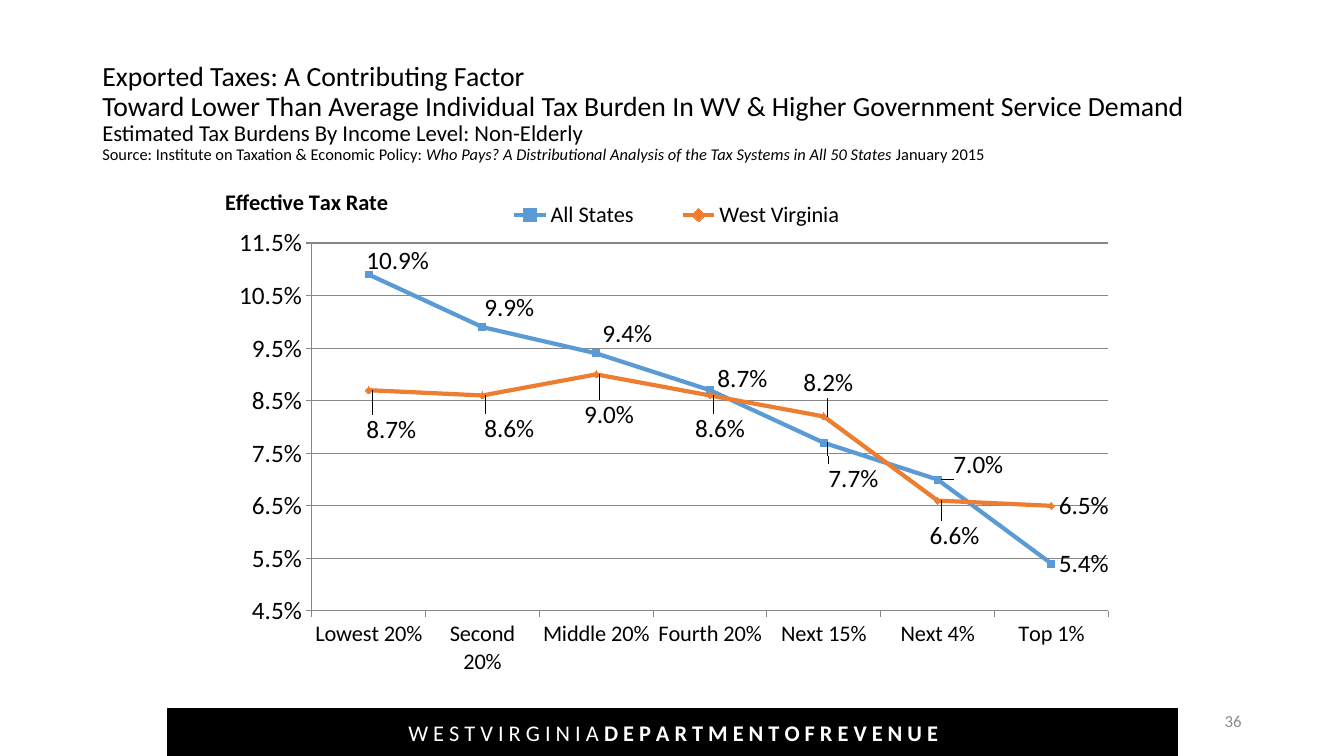
from dataclasses import dataclass

from pptx import Presentation
from pptx.chart.data import CategoryChartData as Data
from pptx.dml.color import RGBColor as Rgb
from pptx.enum.chart import XL_CHART_TYPE as Kind
from pptx.enum.chart import XL_LABEL_POSITION as Side
from pptx.enum.chart import XL_LEGEND_POSITION as Spot
from pptx.enum.chart import XL_MARKER_STYLE as Mark
from pptx.enum.chart import XL_TICK_MARK as Tick
from pptx.enum.shapes import MSO_SHAPE as Form
from pptx.enum.text import MSO_ANCHOR as Anchor
from pptx.enum.text import PP_ALIGN as Align
from pptx.oxml.xmlchemy import OxmlElement as Node
from pptx.util import Pt


@dataclass(frozen=True)
class Theme:
    font: str = "Calibri"
    black: str = "000000"
    white: str = "FFFFFF"
    gray: str = "8C8C8C"
    grid: str = "878787"
    blue: str = "5B9BD5"
    orange: str = "ED7D31"
    head: float = 19.8
    sub: float = 16.2
    source: float = 11.7
    label: float = 18
    small: float = 16
    page: float = 12


class Board:
    """Holds the theme and the current slide."""

    def __init__(self, slide, theme):
        self.slide = slide
        self.theme = theme

    def style(self, font, size, color, bold=False, italic=False):
        font.name = self.theme.font
        font.size = Pt(size)
        font.bold = bold
        font.italic = italic
        font.color.rgb = Rgb.from_string(color)

    def text(self, box, lines, color, align=Align.LEFT, anchor=Anchor.MIDDLE, pitch=1.0):
        """Each line is a list of (words, size, bold, italic) runs."""
        shape = self.slide.shapes.add_textbox(*map(Pt, box))
        frame = shape.text_frame
        frame.word_wrap = True
        frame.vertical_anchor = anchor
        frame.text = "\n".join("" for _ in lines)
        for para, runs in zip(frame.paragraphs, lines):
            para.alignment = align
            para.line_spacing = pitch
            for words, size, bold, italic in runs:
                run = para.add_run()
                run.text = words
                self.style(run.font, size, color, bold, italic)
        return shape

    def bar(self, box, color):
        shape = self.slide.shapes.add_shape(Form.RECTANGLE, *map(Pt, box))
        shape.shadow.inherit = False
        shape.fill.solid()
        shape.fill.fore_color.rgb = Rgb.from_string(color)
        shape.line.color.rgb = Rgb.from_string(color)
        shape.line.width = Pt(1)
        return shape

    def place(self, owner, index, **parts):
        """Give a chart part a manual layout."""
        for old in owner.xpath("c:layout"):
            owner.remove(old)
        layout, manual = Node("c:layout"), Node("c:manualLayout")
        layout.append(manual)
        for tag, value in parts.items():
            item = Node(f"c:{tag}")
            item.set("val", str(value))
            manual.append(item)
        owner.insert(index, layout)

    def axis(self, axis, size):
        axis.major_tick_mark = Tick.OUTSIDE
        axis.minor_tick_mark = Tick.NONE
        axis.format.line.color.rgb = Rgb.from_string(self.theme.grid)
        self.style(axis.tick_labels.font, size, self.theme.black)

    def lines(self, box, cats, rows, title):
        """Each row is (name, values, color, marker, label shifts in points)."""
        look = self.theme
        data = Data(number_format="0.0%")
        data.categories = cats
        for name, values, *_ in rows:
            data.add_series(name, values)
        chart = self.slide.shapes.add_chart(Kind.LINE_MARKERS, *map(Pt, box), data).chart
        chart.has_title = False
        self.style(chart.font, look.label, look.black)

        # Axes
        self.axis(chart.category_axis, look.small)
        scale = chart.value_axis
        self.axis(scale, look.label)
        scale.minimum_scale, scale.maximum_scale, scale.major_unit = 0.045, 0.115, 0.01
        scale.tick_labels.number_format = "0.0%"
        scale.tick_labels.number_format_is_linked = False
        scale.has_major_gridlines = True
        scale.major_gridlines.format.line.color.rgb = Rgb.from_string(look.grid)
        scale.has_title = True
        frame = scale.axis_title.text_frame
        frame.text = title
        self.style(frame.paragraphs[0].runs[0].font, look.small, look.black, bold=True)

        # Legend
        chart.has_legend = True
        chart.legend.position = Spot.TOP
        chart.legend.include_in_layout = False
        self.style(chart.legend.font, look.small, look.black)

        # Series and their labels
        plot = chart.plots[0]
        plot.vary_by_categories = False
        for series, (_, _, color, mark, shifts) in zip(plot.series, rows):
            tint = Rgb.from_string(color)
            series.smooth = False
            series.format.line.color.rgb = tint
            series.format.line.width = Pt(3)
            series.marker.style = mark
            series.marker.size = 5
            series.marker.format.fill.solid()
            series.marker.format.fill.fore_color.rgb = tint
            series.marker.format.line.color.rgb = tint
            labels = series.data_labels
            labels.show_value = True
            labels.number_format = "0.0%"
            labels.number_format_is_linked = False
            labels.position = Side.RIGHT
            self.style(labels.font, look.label, look.black)
            for spot in range(len(shifts)):
                series.points[spot].data_label.position = Side.RIGHT

        # Manual places
        root = chart.element
        moves = [shift for row in rows for shift in row[-1]]
        for label, (right, down) in zip(root.xpath(".//c:dLbl"), moves):
            self.place(label, 1, x=right / box[2], y=down / box[3])
        edge = dict(xMode="edge", yMode="edge")
        self.place(root.xpath(".//c:plotArea")[0], 0, layoutTarget="inner", **edge,
                   x=0.103, y=0.134, w=0.878, h=0.74)
        self.place(root.xpath(".//c:legend")[0], 1, **edge, x=0.28, y=0.05, w=0.45, h=0.05)
        name = root.xpath(".//c:valAx/c:title")[0]
        self.place(name, 1, **edge, x=0.003, y=0.012)
        body = name.xpath(".//a:bodyPr")[0]
        body.set("rot", "0")
        body.set("vert", "horz")


def main():
    deck = Presentation()
    deck.slide_width, deck.slide_height = Pt(960), Pt(540)
    look = Theme()
    board = Board(deck.slides.add_slide(deck.slide_layouts[6]), look)

    # Title
    board.text((66, 29, 828, 104), [
        [("Exported Taxes: A Contributing Factor", look.head, False, False)],
        [("Toward Lower Than Average Individual Tax Burden In WV & Higher Government "
          "Service Demand", look.head, False, False)],
        [("Estimated Tax Burdens By Income Level: Non-Elderly", look.sub, False, False)],
        [("Source: Institute on Taxation & Economic Policy: ", look.source, False, False),
         ("Who Pays? A Distributional Analysis of the Tax Systems in All 50 States ",
          look.source, False, True),
         ("January 2015", look.source, False, False)],
    ], look.black, pitch=0.9)

    # Tax rate chart
    cats = ["Lowest 20%", "Second 20%", "Middle 20%", "Fourth 20%",
            "Next 15%", "Next 4%", "Top 1%"]
    board.lines((156, 126, 648, 356.4), cats, [
        ("All States", [0.109, 0.099, 0.094, 0.087, 0.077, 0.07, 0.054], look.blue,
         Mark.SQUARE, [(-7, -10), (-4, -14), (-1, -14), (0, -8), (-2, 26), (6, -11), (0, 0)]),
        ("West Virginia", [0.087, 0.086, 0.09, 0.086, 0.082, 0.066, 0.065], look.orange,
         Mark.DIAMOND, [(-7, 28), (-4, 24), (-14, 29), (-16, 24), (-20, -24), (-11, 25)]),
    ], "Effective Tax Rate")

    # Page number
    board.text((678, 500.4, 216, 28.8), [[("36", look.page, False, False)]],
               look.gray, Align.RIGHT)

    # Footer band, with wide spaces between the words
    band = board.bar((120, 506, 721, 34), look.black)
    words = board.text((121, 510, 720, 46), [
        [("W E S T V I R G I N I A ", look.small, False, False),
         ("D E P A R T M E N T O F R E V E N U E", look.small, True, False)],
    ], look.white, Align.CENTER, Anchor.TOP)
    board.slide.shapes.add_group_shape([band, words])

    deck.save("out.pptx")


if __name__ == "__main__":
    main()
